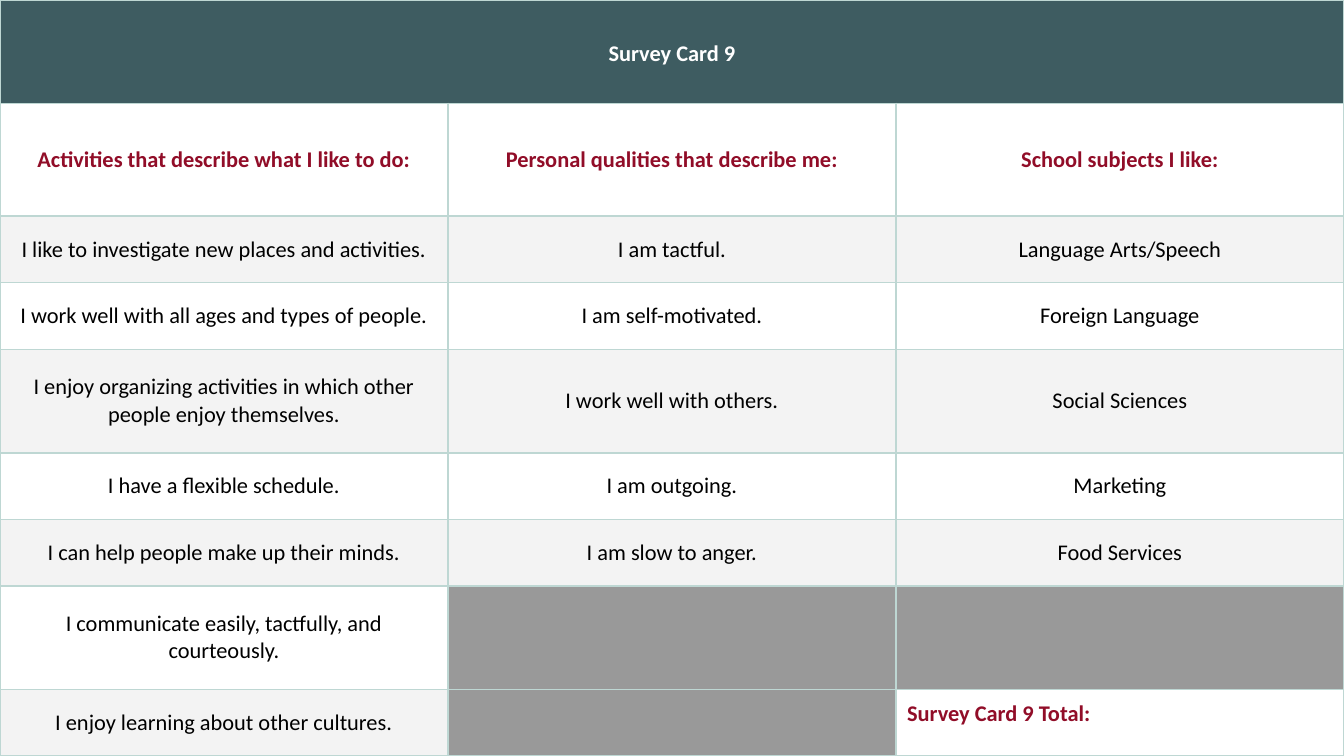
import pptx
import pptx.util
import pptx.dml.color
import pptx.enum.text
import pptx.oxml
import pptx.oxml.ns

Pt = pptx.util.Pt
Align = pptx.enum.text.PP_ALIGN
Anchor = pptx.enum.text.MSO_ANCHOR

COLORS = {
    "banner": "3E5C61",
    "white": "FFFFFF",
    "accent": "910D28",
    "text": "000000",
    "band": "F3F3F3",
    "blocked": "999999",
    "border": "BED7D3",
}
FONT = "Calibri"
FONT_SIZE = 12
PADDING = 6
PAGE = (720, 405)
TALL, SHORT = 55.4, 35.7
ROW_HEIGHTS = [TALL, 60.4, SHORT, SHORT, TALL, SHORT, SHORT, TALL, SHORT]

TITLE = "Survey Card 9"
HEADINGS = [
    "Activities that describe what I like to do:",
    "Personal qualities that describe me:",
    "School subjects I like:",
]
ANSWERS = [
    ["I like to investigate new places and activities.", "I am tactful.", "Language Arts/Speech"],
    ["I work well with all ages and types of people.", "I am self-motivated.", "Foreign Language"],
    ["I enjoy organizing activities in which other people enjoy themselves.",
     "I work well with others.", "Social Sciences"],
    ["I have a flexible schedule.", "I am outgoing.", "Marketing"],
    ["I can help people make up their minds.", "I am slow to anger.", "Food Services"],
    ["I communicate easily, tactfully, and courteously.", None, None],
    ["I enjoy learning about other cultures.", None, None],
]
TOTAL = "Survey Card 9 Total:"


def rgb(name):
    return pptx.dml.color.RGBColor.from_string(COLORS[name])


def add_borders(cell):
    properties = cell._tc.get_or_add_tcPr()
    for index, side in enumerate(("lnL", "lnR", "lnT", "lnB")):
        line = pptx.oxml.parse_xml(
            f'<a:{side} {pptx.oxml.ns.nsdecls("a")} w="{Pt(1)}"><a:solidFill>'
            f'<a:srgbClr val="{COLORS["border"]}"/></a:solidFill></a:{side}>')
        properties.insert(index, line)


def fill_cell(cell, fill):
    if fill:
        cell.fill.solid()
        cell.fill.fore_color.rgb = rgb(fill)
    else:
        cell.fill.background()


def write_cell(cell, text, color="text", bold=False, align=Align.CENTER, anchor=Anchor.MIDDLE):
    cell.vertical_anchor = anchor
    para = cell.text_frame.paragraphs[0]
    para.alignment = align
    span = para.add_run()
    span.text = text
    span.font.name = FONT
    span.font.size = Pt(FONT_SIZE)
    span.font.bold = bold
    span.font.color.rgb = rgb(color)


def add_survey_table(page, box):
    left, top, width, height = box
    columns = len(HEADINGS)
    frame = page.shapes.add_table(
        len(ROW_HEIGHTS), columns, Pt(left), Pt(top), Pt(width), Pt(height))
    table = frame.table
    for column in table.columns:
        column.width = Pt(width / columns)
    for row, row_height in zip(table.rows, ROW_HEIGHTS):
        row.height = Pt(row_height)
    for cell in table.iter_cells():
        cell.margin_left = cell.margin_right = Pt(PADDING)
        cell.margin_top = cell.margin_bottom = Pt(PADDING)
        fill_cell(cell, None)
        add_borders(cell)

    banner = table.cell(0, 0)
    banner.merge(table.cell(0, columns - 1))
    fill_cell(banner, "banner")
    write_cell(banner, TITLE, "white", bold=True)
    banner.text_frame.paragraphs[0].line_spacing = 1.15

    for column, heading in enumerate(HEADINGS):
        write_cell(table.cell(1, column), heading, "accent", bold=True)

    for row, answers in enumerate(ANSWERS):
        for column, answer in enumerate(answers):
            cell = table.cell(row + 2, column)
            if answer is None:
                fill_cell(cell, "blocked")
            else:
                fill_cell(cell, "band" if row % 2 == 0 else None)
                write_cell(cell, answer)

    total = table.cell(len(ROW_HEIGHTS) - 1, columns - 1)
    fill_cell(total, "white")
    write_cell(total, TOTAL, "accent", True, Align.LEFT, Anchor.TOP)


def main():
    deck = pptx.Presentation()
    deck.slide_width, deck.slide_height = (Pt(length) for length in PAGE)
    page = deck.slides.add_slide(deck.slide_layouts[6])
    add_survey_table(page, (0, 0, PAGE[0], sum(ROW_HEIGHTS)))
    deck.save("out.pptx")


if __name__ == "__main__":
    main()
